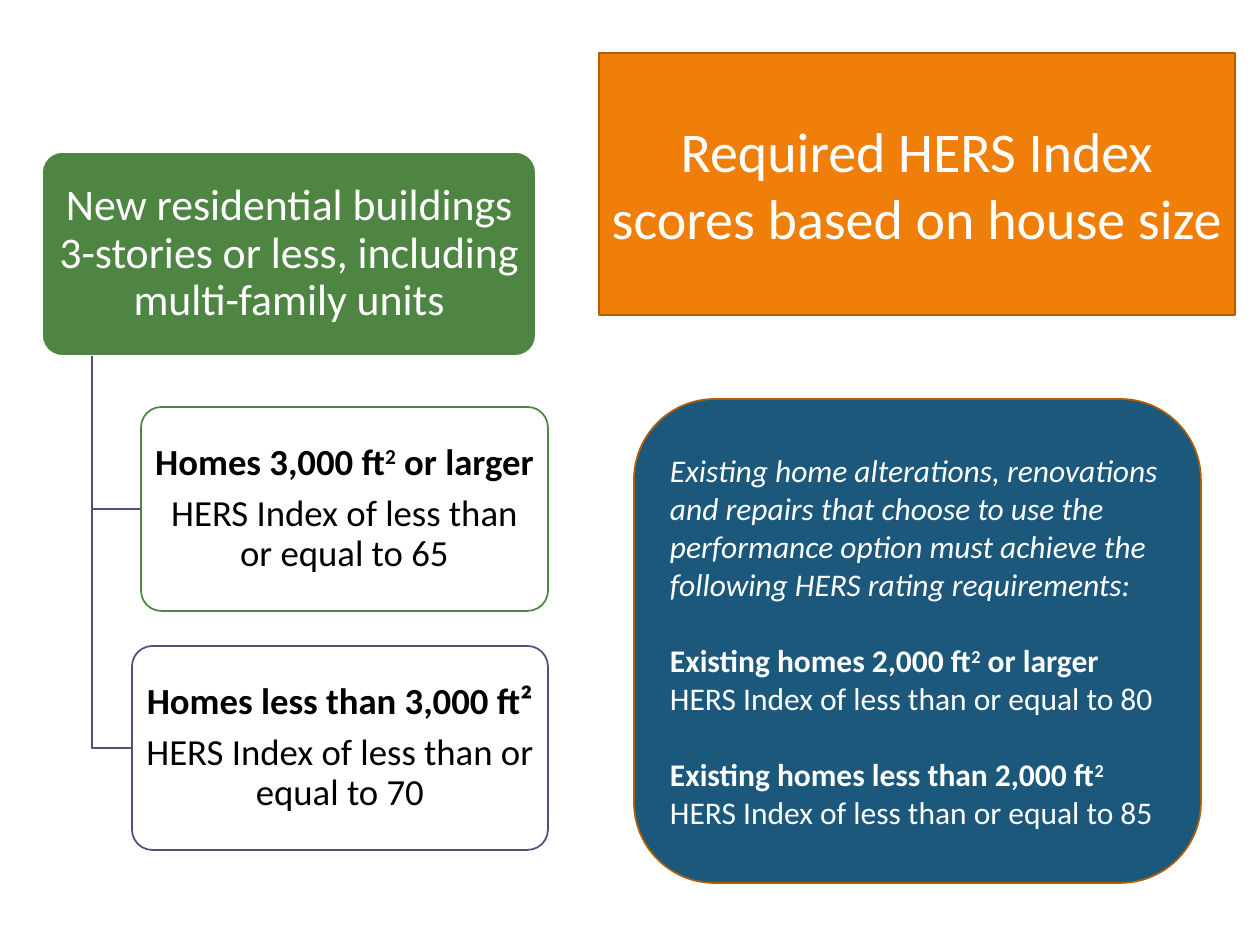
from pptx import Presentation
from pptx.dml.color import RGBColor
from pptx.enum.shapes import MSO_SHAPE
from pptx.enum.text import MSO_ANCHOR, MSO_AUTO_SIZE, PP_ALIGN
from pptx.oxml.ns import qn
from pptx.util import Emu, Pt
from lxml import etree

ROUND = MSO_SHAPE.ROUNDED_RECTANGLE
MIDDLE = MSO_ANCHOR.MIDDLE
LEFT, CENTER = PP_ALIGN.LEFT, PP_ALIGN.CENTER
UNIT = 914400 / 126
HUES = {"green": "4E8542", "purple": "604878", "orange": "F07F09",
        "rust": "B25E07", "blue": "1B587C", "white": "FFFFFF", "black": "000000"}


def paint(shape, fill, line):
    shape.shadow.inherit = False
    shape.fill.solid()
    shape.fill.fore_color.rgb = RGBColor.from_string(HUES[fill])
    shape.line.color.rgb = RGBColor.from_string(HUES[line])
    shape.line.width = Pt(1)


def write(shape, lines, size, hue, align):
    frame = shape.text_frame
    frame.word_wrap = True
    frame.auto_size = MSO_AUTO_SIZE.NONE
    frame.vertical_anchor = MIDDLE
    for i, parts in enumerate(lines):
        para = frame.add_paragraph() if i else frame.paragraphs[0]
        para.alignment = align
        for text, style in parts:
            run = para.add_run()
            run.text = text
            font = run.font
            font.name, font.size = "Calibri", Pt(size)
            font.color.rgb = RGBColor.from_string(HUES[hue])
            font.bold = "b" in style
            font.italic = "i" in style
            if "s" in style:
                run._r.get_or_add_rPr().set("baseline", "30000")
    return frame


deck = Presentation()
deck.slide_width, deck.slide_height = Emu(round(1260 * UNIT)), Emu(round(945 * UNIT))
slide = deck.slides.add_slide(deck.slide_layouts[5])
shapes = slide.shapes

title = shapes.title
title.left, title.top, title.width, title.height = [
    Emu(round(n * UNIT)) for n in (599, 53, 636, 262)]
geom = etree.SubElement(title._element.spPr, qn("a:prstGeom"), prst="roundRect")
etree.SubElement(geom, qn("a:avLst"))
paint(title, "orange", "rust")
write(title, [[("Required HERS Index scores based on house size", "")]],
      32, "white", CENTER)

root = [[("New residential buildings 3-stories or less, including multi-family units", "")]]
large = [[("Homes 3,000 ft", "b"), ("2", "bs"), (" or larger", "b")],
         [("HERS Index of less than or equal to 65", "")]]
small = [[("Homes less than 3,000 ft²", "b")],
         [("HERS Index of less than or equal to 70", "")]]
trunk, base, high = 92, 356, 204

cards = [
    (42, 152, 494, "green", "white", root, 25, "white"),
    (141, 407, 407, "white", "green", large, 21, "black"),
    (132, 646, 416, "white", "purple", small, 21, "black"),
]
for x, y, wide, fill, line, lines, size, hue in cards:
    if lines is not root:
        path = shapes.build_freeform(trunk, base, scale=UNIT)
        mid = y + high // 2
        path.add_line_segments([(trunk, mid), (x, mid)], close=False)
        branch = path.convert_to_shape()
        paint(branch, "white", "purple")
        branch.fill.background()
    card = shapes.add_shape(ROUND, *[Emu(round(n * UNIT)) for n in (x, y, wide, high)])
    card.adjustments[0] = 0.1
    paint(card, fill, line)
    frame = write(card, lines, size, hue, CENTER)
    frame.margin_left = frame.margin_right = Emu(round(5 * UNIT))
    frame.margin_top = frame.margin_bottom = Emu(round(4 * UNIT))
    for para in frame.paragraphs:
        para.line_spacing = 0.9
        para.space_after = Pt(7)

panel = shapes.add_shape(ROUND, *[Emu(round(n * UNIT)) for n in (634, 399, 567, 484)])
paint(panel, "blue", "rust")
frame = write(panel, [
    [("Existing home alterations, renovations and repairs that choose to use the "
      "performance option must achieve the following HERS rating requirements:", "i")],
    [("Existing homes 2,000 ft", "b"), ("2", "bs"), (" or larger", "b")],
    [("HERS Index of less than or equal to 80", "")],
    [("Existing homes less than 2,000 ft", "b"), ("2", "bs")],
    [("HERS Index of less than or equal to 85", "")],
], 18, "white", LEFT)
for para in frame.paragraphs[1::2]:
    para.space_before = Pt(22)

deck.save("out.pptx")
